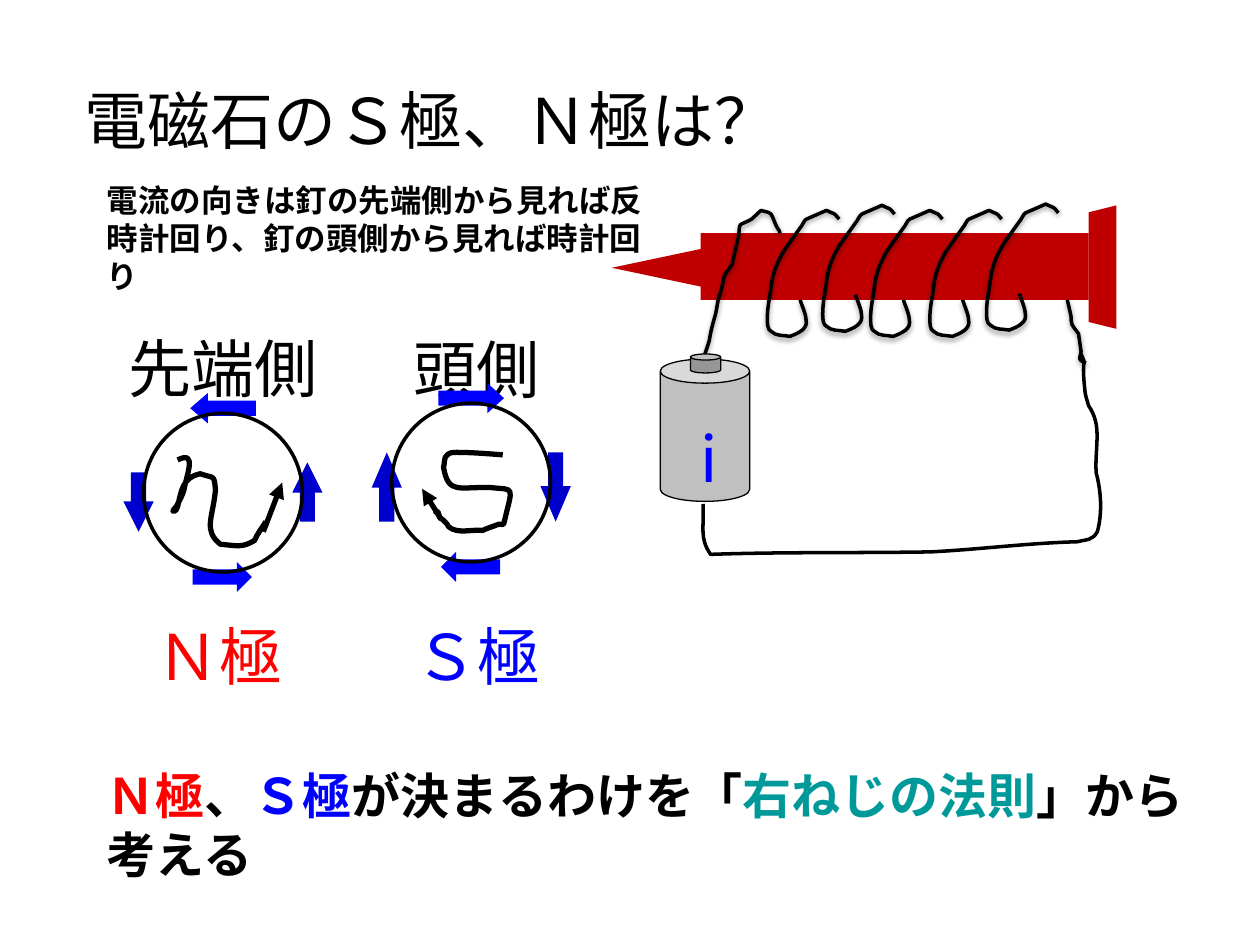
from lxml import etree
from pptx import Presentation
from pptx.dml.color import RGBColor
from pptx.enum.shapes import MSO_CONNECTOR, MSO_SHAPE
from pptx.enum.text import MSO_ANCHOR, MSO_AUTO_SIZE, PP_ALIGN
from pptx.oxml import parse_xml
from pptx.oxml.ns import nsdecls, qn
from pptx.util import Inches, Pt

BLACK = RGBColor(0x00, 0x00, 0x00)
RED = RGBColor(0xFF, 0x00, 0x00)
BLUE = RGBColor(0x00, 0x00, 0xFF)
DARK_BLUE = RGBColor(0x00, 0x00, 0xCC)
TEAL = RGBColor(0x00, 0x99, 0x99)
NAIL_RED = RGBColor(0xC0, 0x00, 0x00)
SILVER = RGBColor(0xC0, 0xC0, 0xC0)
GRAY = RGBColor(0x96, 0x96, 0x96)
LABEL_FONT, BODY_FONT = "Noto Sans CJK JP", "Arial"
RECT, TRIANGLE, TRAPEZOID = MSO_SHAPE.RECTANGLE, MSO_SHAPE.ISOSCELES_TRIANGLE, MSO_SHAPE.TRAPEZOID
CAN, OVAL = MSO_SHAPE.CAN, MSO_SHAPE.OVAL
LEFT, RIGHT = MSO_SHAPE.LEFT_ARROW, MSO_SHAPE.RIGHT_ARROW
UP, DOWN = MSO_SHAPE.UP_ARROW, MSO_SHAPE.DOWN_ARROW
STRAIGHT = MSO_CONNECTOR.STRAIGHT
TOP, CENTER, NO_FIT = MSO_ANCHOR.TOP, PP_ALIGN.CENTER, MSO_AUTO_SIZE.NONE

# Curves: a start point, then line ends (x, y) or cubic segments (x1, y1, x2, y2, x, y)
LOOP = [(0.26, 0.71), (0.28, 0.77, 0.31, 0.83, 0.31, 0.89), (0.31, 0.96, 0.2, 0.99, 0.18, 1),
        (0.13, 0.99, 0.07, 1, 0.03, 0.96), (0, 0.95, 0, 0.89, 0, 0.86),
        (0, 0.77, 0.02, 0.69, 0.03, 0.61), (0.04, 0.49, 0.1, 0.36, 0.16, 0.28), (0.26, 0.14),
        (0.28, 0.12, 0.29, 0.08, 0.31, 0.07), (0.47, 0), (0.55, 0.04, 0.52, 0.01, 0.57, 0.07)]
LOOP_ORIGINS = [(6.09, 1.67), (6.53, 1.63), (6.91, 1.67), (7.38, 1.67), (7.83, 1.62)]
FIRST_TURN = [(5.57, 2.88), (5.59, 2.82, 5.61, 2.77, 5.63, 2.7), (5.64, 2.63, 5.66, 2.56, 5.68, 2.49),
              (5.7, 2.38), (5.73, 2.28), (5.74, 2.24, 5.74, 2.2, 5.76, 2.17), (5.81, 2.1), (5.86, 1.88),
              (5.87, 1.85, 5.86, 1.79, 5.88, 1.78), (5.99, 1.73, 5.94, 1.76, 6.04, 1.67),
              (6.07, 1.68, 6.1, 1.68, 6.12, 1.7), (6.14, 1.73, 6.15, 1.78, 6.17, 1.81),
              (6.18, 1.82, 6.19, 1.84, 6.19, 1.85)]
LAST_TURN = [(8.47, 2.38), (8.48, 2.42, 8.49, 2.46, 8.5, 2.51), (8.5, 2.53, 8.5, 2.55, 8.51, 2.58),
             (8.52, 2.6, 8.54, 2.62, 8.56, 2.65), (8.58, 2.79), (8.58, 2.82, 8.55, 2.85, 8.59, 2.87),
             (8.62, 2.88)]
RETURN_WIRE = [(5.58, 4), (5.59, 4.19, 5.55, 4.27, 5.64, 4.4), (6.22, 4.38, 6.81, 4.39, 7.39, 4.38),
               (7.78, 4.36, 8.16, 4.31, 8.55, 4.3), (8.63, 4.28, 8.67, 4.29, 8.71, 4.22),
               (8.75, 4.07, 8.74, 3.9, 8.7, 3.75), (8.69, 3.53, 8.75, 3.38, 8.64, 3.22),
               (8.63, 3.18, 8.61, 3.13, 8.61, 3.09), (8.58, 2.81, 8.63, 2.92, 8.58, 2.81)]
LETTER_S = [(3.99, 3.61), (3.86, 3.6, 3.74, 3.59, 3.62, 3.59), (3.6, 3.59, 3.57, 3.59, 3.55, 3.61),
            (3.52, 3.63, 3.53, 3.68, 3.52, 3.71), (3.56, 3.93, 3.64, 3.86, 3.9, 3.87),
            (4.09, 3.89, 4.07, 3.85, 4, 4.15), (4, 4.17, 3.97, 4.16, 3.96, 4.16),
            (3.91, 4.18, 3.87, 4.19, 3.83, 4.21), (3.74, 4.2, 3.63, 4.24, 3.56, 4.18),
            (3.55, 4.17, 3.55, 4.15, 3.53, 4.14), (3.52, 4.12, 3.5, 4.12, 3.49, 4.11),
            (3.47, 4.05, 3.49, 4.06, 3.44, 4.06)]
LETTER_N = [(1.41, 3.65), (1.57, 3.57, 1.48, 3.77, 1.46, 3.89), (1.45, 3.93, 1.42, 3.98, 1.4, 4.02),
            (1.39, 4.03, 1.36, 4.06, 1.38, 4.06), (1.4, 4.06, 1.4, 4.04, 1.41, 4.02),
            (1.44, 3.89, 1.45, 3.79, 1.59, 3.76), (1.7, 3.8, 1.7, 3.76, 1.71, 3.89),
            (1.69, 4.11, 1.61, 4.21, 1.75, 4.32), (1.88, 4.33, 1.92, 4.35, 2.02, 4.29),
            (2.04, 4.24, 2.08, 4.19, 2.11, 4.14)]


class Builder:
    def __init__(self, prs):
        self.s = prs.slides.add_slide(prs.slide_layouts[5])

    def shape(self, kind, box, fill=None, line=None, rotation=0, adj=()):
        sp = self.s.shapes.add_shape(kind, *map(Inches, box))
        for i, value in enumerate(adj):
            sp.adjustments[i] = value
        sp.rotation = rotation
        self.style(sp, fill, line)

    def style(self, sp, fill, line):
        sp.shadow.inherit = False
        if fill is None:
            sp.fill.background()
        else:
            sp.fill.solid()
            sp.fill.fore_color.rgb = fill
        if line is None:
            sp.line.fill.background()
        else:
            sp.line.color.rgb = BLACK
            sp.line.width = Pt(line)

    def curve(self, curve, width=2, origin=(0, 0), shadow=False):
        points = [(Inches(seg[i] + origin[0]), Inches(seg[i + 1] + origin[1]))
                  for seg in curve for i in range(0, len(seg), 2)]
        fb = self.s.shapes.build_freeform(*points[0])
        fb.add_line_segments(points[1:], close=False)
        sp = fb.convert_to_shape()
        # Join the three points of each cubic segment into one Bezier
        lines = iter(list(sp._element.iter(qn("a:lnTo"))))
        for seg in curve[1:]:
            first = next(lines)
            if len(seg) == 6:
                first.tag = qn("a:cubicBezTo")
                for other in (next(lines), next(lines)):
                    first.append(other[0])
                    other.getparent().remove(other)
        self.style(sp, None, width)
        if shadow:
            effects = sp._element.spPr.find(qn("a:effectLst"))
            effects.append(parse_xml(
                f'<a:outerShdw {nsdecls("a")} blurRad="{Pt(3.1)}" dist="{Pt(1.6)}" dir="5400000">'
                '<a:srgbClr val="000000"><a:alpha val="38000"/></a:srgbClr></a:outerShdw>'))

    def arrow(self, start, end):
        cx = self.s.shapes.add_connector(STRAIGHT, *map(Inches, start + end))
        cx.line.color.rgb = BLACK
        cx.line.width = Pt(3)
        etree.SubElement(cx.line._get_or_add_ln(), qn("a:tailEnd"), type="triangle")
        etree.SubElement(cx._element.spPr, qn("a:effectLst"))

    def dial(self, x, y, arrows):
        for kind, (dx, dy, w, h), head in arrows:
            color = BLUE if kind in (LEFT, RIGHT) else DARK_BLUE
            self.shape(kind, (x + dx, y + dy, w, h), color, adj=(0.5, head))
        self.shape(OVAL, (x, y, 1.26, 1.26), line=2)

    def format_run(self, r, size, font, color, bold=False):
        r.font.size, r.font.name, r.font.bold = Pt(size), font, bold
        r.font.color.rgb = color
        etree.SubElement(r._r.get_or_add_rPr(), qn("a:ea"), typeface=LABEL_FONT)

    def label(self, text, box, color=BLACK, title=False):
        shapes = self.s.shapes
        sp = shapes.title if title else shapes.add_textbox(0, 0, 0, 0)
        sp.left, sp.top, sp.width, sp.height = map(Inches, box)
        tf = sp.text_frame
        tf.text = text
        tf.word_wrap, tf.auto_size, tf.vertical_anchor = False, NO_FIT, TOP
        tf.margin_left = tf.margin_right = tf.margin_bottom = 0
        tf.margin_top = Inches(0.05)
        p = tf.paragraphs[0]
        p.alignment = CENTER
        self.format_run(p.runs[0], 36, LABEL_FONT, color)

    def paragraph(self, parts, box, size):
        tf = self.s.shapes.add_textbox(*map(Inches, box)).text_frame
        tf.word_wrap = True
        for text, color in parts:
            r = tf.paragraphs[0].add_run()
            r.text = text
            self.format_run(r, size, BODY_FONT, color, bold=True)


def main():
    prs = Presentation()
    prs.slide_width, prs.slide_height = Inches(10), Inches(7.5)
    b = Builder(prs)

    # Nail
    b.shape(RECT, (5.56, 1.85, 3.08, 0.53), NAIL_RED)
    b.shape(TRIANGLE, (5.06, 1.77, 0.3, 0.71), NAIL_RED, rotation=270)
    b.shape(TRAPEZOID, (8.26, 2.01, 0.98, 0.22), NAIL_RED, rotation=270)

    # Coil
    b.curve(FIRST_TURN, shadow=True)
    for origin in LOOP_ORIGINS:
        b.curve(LOOP, origin=origin, shadow=True)
    b.curve(LAST_TURN, shadow=True)

    # Battery and return wire
    b.shape(CAN, (5.24, 2.85, 0.71, 1.13), SILVER, 0.75, adj=(0.27,))
    b.shape(CAN, (5.48, 2.81, 0.24, 0.15), GRAY, 0.75, adj=(0.32,))
    b.curve(RETURN_WIRE)
    b.label("i", (5.55, 3.28, 0.16, 0.55), BLUE)

    # Title and explanation
    b.label("電磁石のＳ極、Ｎ極は？", (0.42, 0.6, 6, 0.5), title=True)
    b.paragraph([("電流の向きは釘の先端側から見れば反時計回り、釘の頭側から見れば時計回り", BLACK)],
                (0.75, 1.39, 4.65, 0.7), 18)

    # Both ends of the nail
    b.label("先端側", (1.22, 2.57, 1.1, 0.34))
    b.label("頭側", (3.35, 2.57, 0.87, 0.31))
    b.curve(LETTER_S, 3)
    b.arrow((3.5, 4.12), (3.35, 3.88))
    b.curve(LETTER_N, 3)
    b.arrow((2.09, 4.22), (2.24, 3.83))
    b.label("Ｎ極", (1.3, 4.85, 0.89, 0.5), RED)
    b.label("Ｓ極", (3.35, 4.85, 0.88, 0.5), BLUE)

    # Current direction: counterclockwise, then clockwise
    top, bottom = (0.37, -0.16, 0.52, 0.24), (0.39, 1.18, 0.47, 0.24)
    b.dial(1.14, 3.28, [(LEFT, top, 0.58), (RIGHT, bottom, 0.5),
                        (DOWN, (-0.16, 0.47, 0.24, 0.47), 1), (UP, (1.18, 0.39, 0.24, 0.47), 1)])
    b.dial(3.11, 3.2, [(RIGHT, top, 0.55), (LEFT, bottom, 0.5),
                       (UP, (-0.16, 0.39, 0.24, 0.55), 1.17), (DOWN, (1.18, 0.39, 0.24, 0.55), 1.17)])

    # Conclusion
    b.paragraph([("Ｎ極", RED), ("、", BLACK), ("Ｓ極", BLUE), ("が決まるわけを「", BLACK),
                 ("右ねじの法則", TEAL), ("」から考える", BLACK)], (0.75, 6.03, 8.9, 0.57), 28)

    prs.save("out.pptx")


if __name__ == "__main__":
    main()
